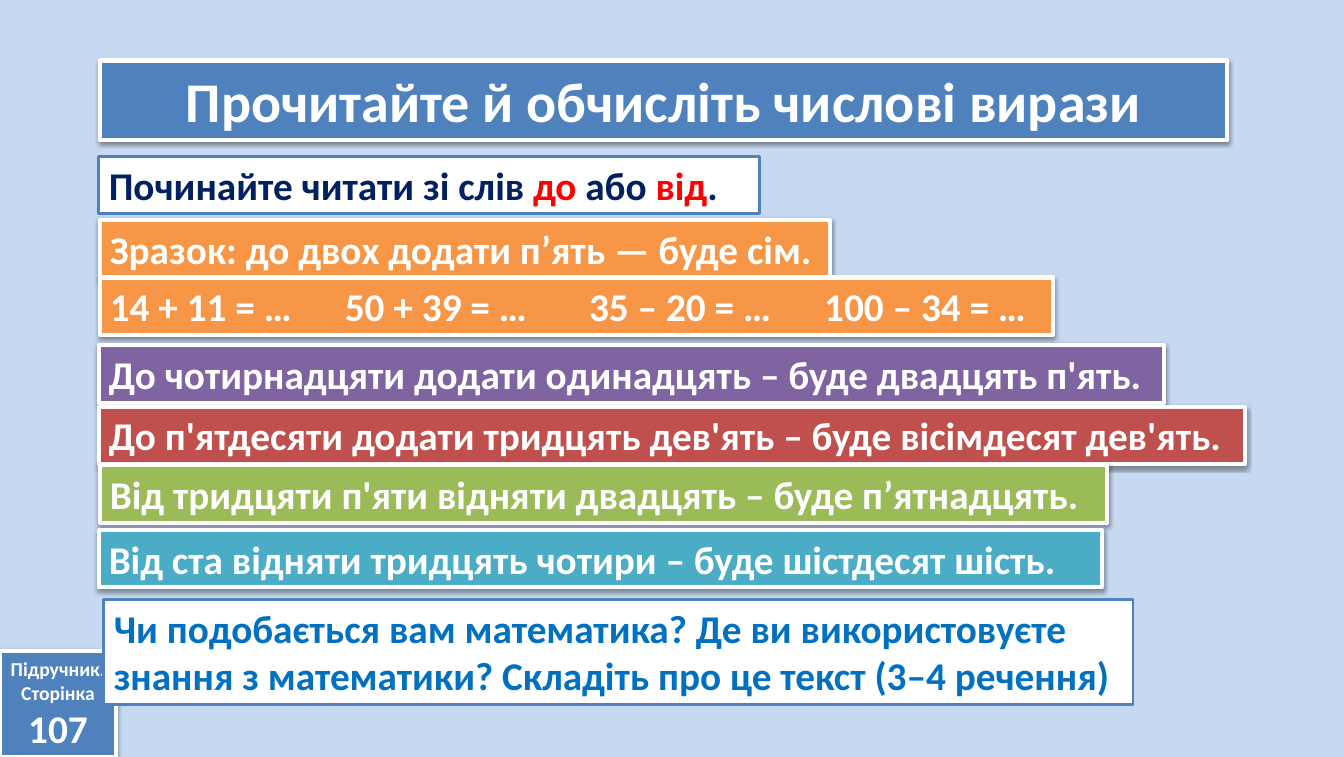
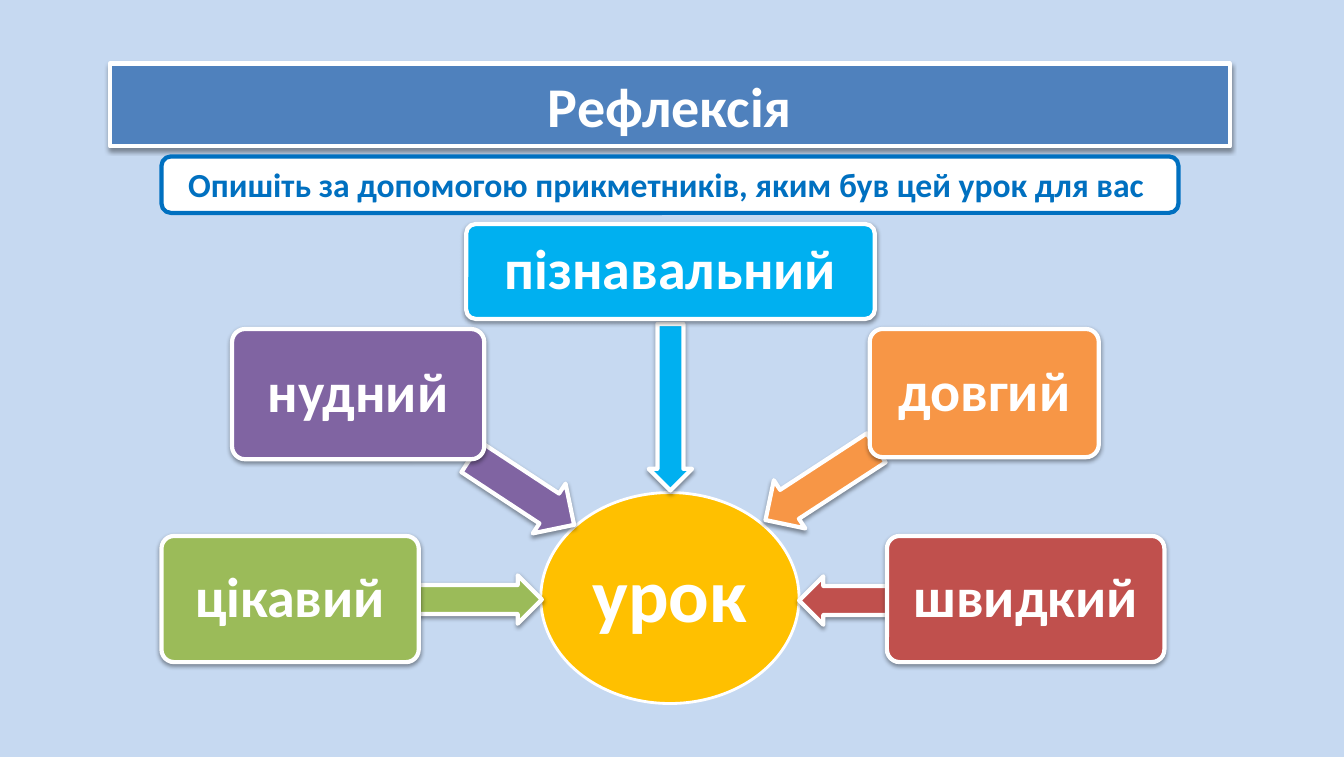
import pptx
import pptx.util
import pptx.dml.color
import pptx.enum.shapes
import pptx.enum.text
import pptx.oxml
import pptx.oxml.ns

Inches, Pt = pptx.util.Inches, pptx.util.Pt
SHAPE = pptx.enum.shapes.MSO_SHAPE
ALIGN = pptx.enum.text.PP_ALIGN
ANCHOR = pptx.enum.text.MSO_ANCHOR
NS = pptx.oxml.ns.nsdecls("a")

COLORS = {
    "back": "C6D9F1", "white": "FFFFFF", "blue": "4F81BD", "navy": "002060",
    "ink": "0070C0", "key": "FF0000", "purple": "8064A2", "red": "C0504D",
    "green": "9BBB59", "teal": "4BACC6", "orange": "F79646",
    "sky": "00B0F0", "gold": "FFC000",
}
FONT = {"name": "Calibri", "bold": True}

# Content of slide 1: left, top, width, height, fill, line, paragraph runs
EQUATIONS = ["14 + 11 = …", "50 + 39 = …", "35 – 20 = …", "100 – 34 = …"]
EQUATION_TABS = [2.33, 4.75, 7.08]
STRIP_H = 0.57
STRIPS = [
    (0.98, 1.55, 6.55, STRIP_H, "white", "blue",
     [("Починайте читати зі слів ", "navy"), ("до", "key"), (" або ", "navy"),
      ("від", "key"), (".", "navy")]),
    (0.99, 2.18, 7.24, STRIP_H, "orange", "white",
     [("Зразок: до двох додати п’ять — буде сім.", "white")]),
    (0.99, 2.75, 9.45, STRIP_H, "orange", "white",
     [("\t".join(EQUATIONS), "white")]),
    (0.98, 3.42, 10.56, STRIP_H, "purple", "white",
     [("До чотирнадцяти додати одинадцять – буде двадцять п'ять.", "white")]),
    (0.98, 4.03, 11.36, STRIP_H, "red", "white",
     [("До п'ятдесяти додати тридцять дев'ять – буде вісімдесят дев'ять.", "white")]),
    (0.99, 4.61, 9.98, STRIP_H, "green", "white",
     [("Від тридцяти п'яти відняти двадцять – буде п’ятнадцять.", "white")]),
    (0.98, 5.25, 9.94, STRIP_H, "teal", "white",
     [("Від ста відняти тридцять чотири – буде шістдесят шість.", "white")]),
    (1.03, 5.94, 10.2, 1.04, "white", "blue",
     [("Чи подобається вам математика? Де ви використовуєте знання з математики? "
       "Складіть про це текст (3–4 речення)", "ink")]),
]
BADGE = [("Підручник.", 14), ("Сторінка", 14), ("107", 28)]

# Content of slide 2: word, fill, box, arrow box, arrow rotation
ADJECTIVES = [
    ("цікавий", "green", (1.6, 5.31, 2.55, 1.25), (3.94, 5.7, 1.43, 0.48), 180),
    ("нудний", "purple", (2.3, 3.26, 2.5, 1.29), (4.57, 4.57, 1.22, 0.59), 213.3),
    ("пізнавальний", "sky", (4.62, 2.22, 4.05, 0.94), (5.82, 3.82, 1.65, 0.43), 270),
    ("довгий", "orange", (8.62, 3.26, 2.27, 1.27), (7.48, 4.51, 1.31, 0.57), 326.9),
    ("швидкий", "red", (8.79, 5.31, 2.75, 1.25), (7.92, 5.71, 2.12, 0.48), 0),
]


def rgb(name):
    return pptx.dml.color.RGBColor.from_string(COLORS[name])


def add_box(s, at, fill, line="white", line_pt=3, kind=SHAPE.RECTANGLE,
            adj=(), shadow=True):
    sp = s.shapes.add_shape(kind, *(Inches(v) for v in at))
    for i, value in enumerate(adj):
        sp.adjustments[i] = value
    sp.fill.solid()
    sp.fill.fore_color.rgb = rgb(fill)
    sp.line.color.rgb = rgb(line)
    sp.line.width = Pt(line_pt)
    sp.shadow.inherit = False
    if shadow:
        effects = sp._element.spPr.find(pptx.oxml.ns.qn("a:effectLst"))
        effects.append(pptx.oxml.parse_xml(
            f'<a:outerShdw {NS} blurRad="40000" dist="20000" dir="5400000" '
            'rotWithShape="0"><a:srgbClr val="000000"><a:alpha val="38000"/>'
            '</a:srgbClr></a:outerShdw>'))
    return sp


def write(sp, paragraphs, align=ALIGN.CENTER, anchor=ANCHOR.MIDDLE,
          inset=None, spacing=None):
    """Each paragraph is a list of (text, size, colour) runs."""
    tf = sp.text_frame
    tf.word_wrap = True
    tf.vertical_anchor = anchor
    if inset is not None:
        for side in ("left", "top", "right", "bottom"):
            setattr(tf, f"margin_{side}", Inches(inset))
    for i, runs in enumerate(paragraphs):
        p = tf.add_paragraph() if i else tf.paragraphs[0]
        p.alignment = align
        if spacing:
            p.line_spacing = spacing
        for text, size, color in runs:
            r = p.add_run()
            r.text = text
            for key, value in {**FONT, "size": Pt(size)}.items():
                setattr(r.font, key, value)
            r.font.color.rgb = rgb(color)


def add_slide(prs, title, at):
    s = prs.slides.add_slide(prs.slide_layouts[6])
    write(add_box(s, at, "blue"), [[(title, 40, "white")]])
    return s


def set_tabs(p, stops):
    tabs = "".join(f'<a:tab pos="{Inches(v)}" algn="l"/>' for v in stops)
    p._p.get_or_add_pPr().append(
        pptx.oxml.parse_xml(f"<a:tabLst {NS}>{tabs}</a:tabLst>"))


def build_expressions(prs):
    s = add_slide(prs, "Прочитайте й обчисліть числові вирази",
                  (0.99, 0.6, 11.17, 0.79))
    # Textbook page badge
    badge = add_box(s, (0, 6.45, 1.15, 1.05), "blue")
    write(badge, [[(text, size, "white")] for text, size in BADGE])
    # Instruction, sample, answers and question
    for *at, fill, line, runs in STRIPS:
        plain = fill == "white"
        sp = add_box(s, at, fill, line, 2 if plain else 3, shadow=not plain)
        write(sp, [[(text, 28, color) for text, color in runs]],
              ALIGN.LEFT, ANCHOR.TOP)
        if "\t" in runs[0][0]:
            set_tabs(sp.text_frame.paragraphs[0], EQUATION_TABS)


def build_reflection(prs):
    s = add_slide(prs, "Рефлексія", (1.09, 0.63, 11.1, 0.82))
    # Lesson in the centre
    hub = add_box(s, (5.36, 4.88, 2.56, 2.09), "gold", line_pt=2,
                  kind=SHAPE.OVAL, shadow=False)
    write(hub, [[("урок", 54, "white")]], inset=0.04, spacing=0.9)
    # Adjectives pointing at it
    for word, fill, box_at, arrow_at, angle in ADJECTIVES:
        arrow = add_box(s, arrow_at, fill, kind=SHAPE.LEFT_ARROW, adj=(0.6, 0.5))
        arrow.rotation = angle
        box = add_box(s, box_at, fill, kind=SHAPE.ROUNDED_RECTANGLE, adj=(0.1,))
        write(box, [[(word, 40, "white")]], inset=0.08, spacing=0.9)
    # Task
    task = add_box(s, (1.6, 1.55, 10.08, 0.56), "white", "ink",
                   kind=SHAPE.ROUNDED_RECTANGLE, shadow=False)
    write(task, [[("Опишіть за допомогою прикметників, яким був цей урок для вас ",
                   24, "ink")]], anchor=ANCHOR.TOP)


def main():
    prs = pptx.Presentation()
    prs.slide_width, prs.slide_height = Inches(13.32), Inches(7.5)
    back = prs.slide_master.background.fill
    back.solid()
    back.fore_color.rgb = rgb("back")
    build_expressions(prs)
    build_reflection(prs)
    prs.save("out.pptx")


if __name__ == "__main__":
    main()
